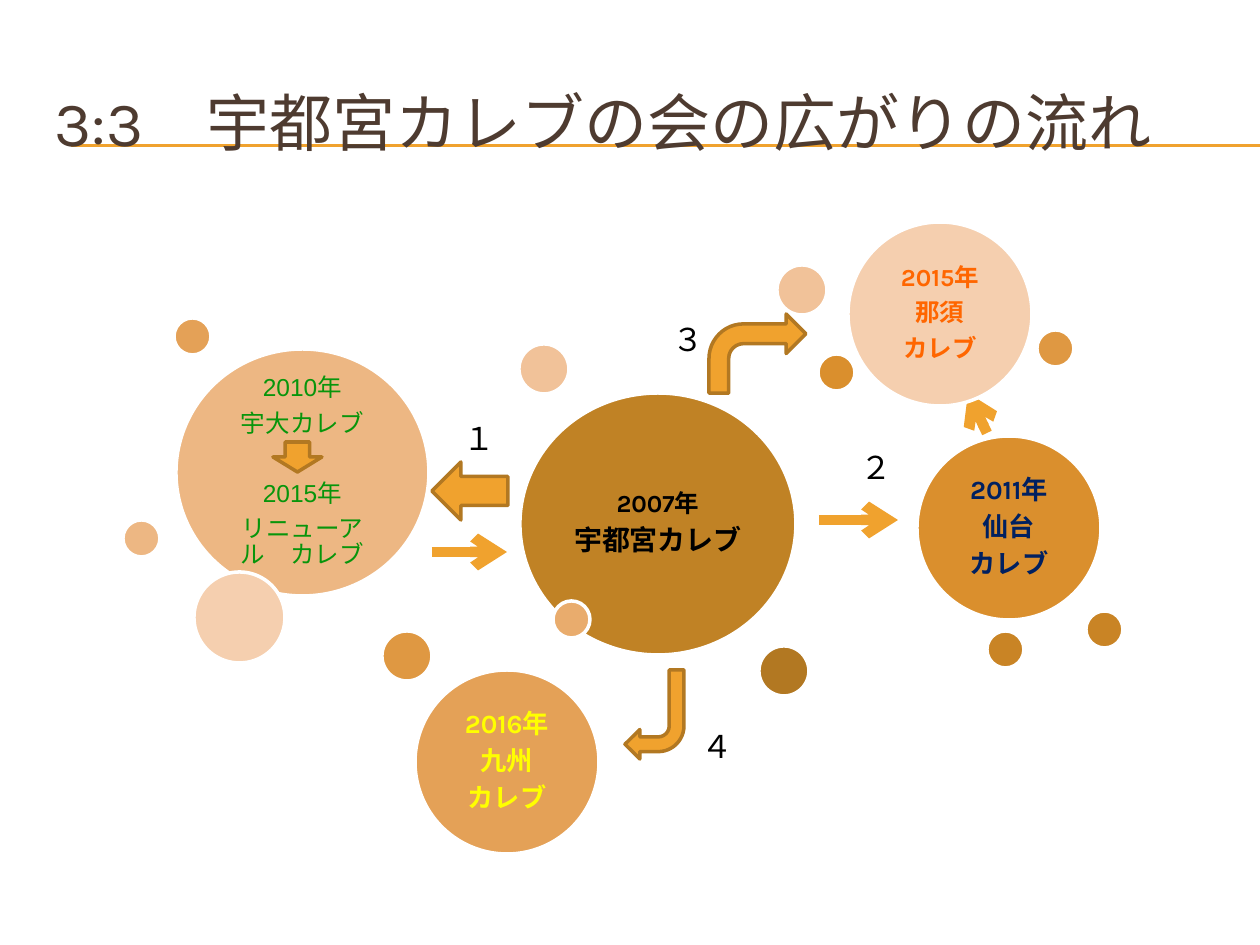
import pptx
import pptx.util
import pptx.dml.color
import pptx.enum.shapes
import pptx.enum.text
import lxml.etree
from pptx.oxml.ns import qn

PX = 914400 // 126
Pt = pptx.util.Pt
Kind = pptx.enum.shapes.MSO_SHAPE
Align = pptx.enum.text.PP_ALIGN
Anchor = pptx.enum.text.MSO_ANCHOR
GOLD, EDGE, WHITE, BLACK = "F0A22E", "B27822", "FFFFFF", "000000"


def paint(fill, code):
    fill.solid()
    fill.fore_color.rgb = pptx.dml.color.RGBColor.from_string(code)


def write(frame, lines, code, look, form):
    """Fill a text frame; each line is (text, size, space before)."""
    for i, (text, size, gap) in enumerate(lines):
        para = frame.paragraphs[0] if i == 0 else frame.add_paragraph()
        for key, value in form.items():
            setattr(para, key, value)
        if gap:
            para.space_before = Pt(gap)
        run = para.add_run()
        run.text = text
        run.font.size = Pt(size)
        for key, value in look.items():
            setattr(run.font, key, value)
        paint(run.font.fill, code)


deck = pptx.Presentation()
deck.slide_width, deck.slide_height = 1260 * PX, 945 * PX
slide = deck.slides.add_slide(deck.slide_layouts[6])
shapes = slide.shapes

plain = {"name": "Karla"}
bold = {"name": "Karla", "bold": True}
green = {"name": "Arial"}
mid = {"alignment": Align.CENTER, "line_spacing": 0.9, "space_after": Pt(5)}

# Rules under the title, then the arrows between groups
rules = [(71, y, 1260, y, 0.75, False) for y in (145, 146)]
flows = [
    (819, 520, 898, 520, 6, True),
    (987, 433, 968, 393, 6, True),
    (432, 552, 507, 552, 6, True),
]

# Circles: left, top, width, height, fill, text colour, look, lines
rings = [
    (520, 393, 276, 262, "C08225", BLACK, bold,
     [("2007年", 14, 0), ("宇都宮カレブ", 16, 0)]),
    (176, 349, 253, 247, "EDB783", "08950B", green,
     [("2010年", 14, 0), ("宇大カレブ", 14, 0),
      ("2015年", 14, 20), ("リニューアル　カレブ", 14, 0)]),
    (848, 222, 184, 184, "F5CFAF", "FF6600", bold,
     [("2015年", 14, 0), ("那須", 14, 0), ("カレブ", 14, 0)]),
    (415, 670, 184, 184, "E4A157", "FFFF00", bold,
     [("2016年", 15, 0), ("九州", 15, 0), ("カレブ", 15, 0)]),
    (917, 436, 184, 184, "DA8F2D", "002060", bold,
     [("2011年", 15, 0), ("仙台", 15, 0), ("カレブ", 15, 0)]),
]
dots = [
    (759, 646, 50, "B27822"), (1086, 611, 37, "C98425"),
    (818, 354, 37, "DA8F2D"), (382, 631, 50, "DF9842"),
    (174, 318, 37, "E4A157"), (519, 344, 50, "F1C299"),
    (194, 572, 91, "F5CFAF"), (777, 265, 50, "F1C299"),
    (123, 520, 37, "EDB783"), (553, 601, 37, "E9AC6D"),
    (1037, 330, 37, "DF9842"), (987, 631, 37, "C98425"),
]
blocks = [
    (Kind.DOWN_ARROW, 273, 442, 49, 30, 0),
    (Kind.BENT_ARROW, 709, 314, 97, 79, 0),
    (Kind.LEFT_ARROW, 432, 462, 76, 58, 0),
    (Kind.BENT_ARROW, 625, 670, 59, 89, 180),
]

for x1, y1, x2, y2, width, head in rules + flows:
    line = shapes.add_connector(
        pptx.enum.shapes.MSO_CONNECTOR.STRAIGHT,
        x1 * PX, y1 * PX, x2 * PX, y2 * PX)
    line.line.width = Pt(width)
    paint(line.line.fill, GOLD)
    props = line._element.spPr
    if head:
        tip = lxml.etree.SubElement(props.find(qn("a:ln")), qn("a:tailEnd"))
        tip.set("type", "arrow")
    lxml.etree.SubElement(props, qn("a:effectLst"))

parts = [(Kind.OVAL, x, y, w, h, 0, fill, WHITE, text)
         for x, y, w, h, fill, *text in rings]
parts += [(Kind.OVAL, x, y, d, d, 0, fill, WHITE, None)
          for x, y, d, fill in dots]
parts += [(*block, GOLD, EDGE, None) for block in blocks]
for kind, x, y, w, h, turn, fill, edge, text in parts:
    shape = shapes.add_shape(kind, x * PX, y * PX, w * PX, h * PX)
    shape.shadow.inherit = False
    shape.rotation = turn
    paint(shape.fill, fill)
    paint(shape.line.fill, edge)
    shape.line.width = Pt(2)
    if text:
        frame = shape.text_frame
        frame.word_wrap = True
        frame.vertical_anchor = Anchor.MIDDLE
        for side in ("left", "top", "right", "bottom"):
            setattr(frame, "margin_" + side, 8 * PX)
        code, look, lines = text
        write(frame, lines, code, look, mid)

# Title and step numbers
notes = [
    (42, 63, 1197, 116, "3:3　宇都宮カレブの会の広がりの流れ", 36, "4E3B30", True),
    (451, 413, 57, 50, "１", 18, BLACK, False),
    (848, 442, 57, 50, "２", 18, BLACK, False),
    (660, 314, 57, 50, "３", 18, BLACK, False),
    (689, 721, 57, 50, "４", 18, BLACK, False),
]
for x, y, w, h, text, size, code, wrap in notes:
    frame = shapes.add_textbox(x * PX, y * PX, w * PX, h * PX).text_frame
    frame.word_wrap = wrap
    frame.vertical_anchor = Anchor.MIDDLE if wrap else Anchor.TOP
    write(frame, [(text, size, 0)], code, plain, {"alignment": Align.LEFT})

deck.save("out.pptx")
